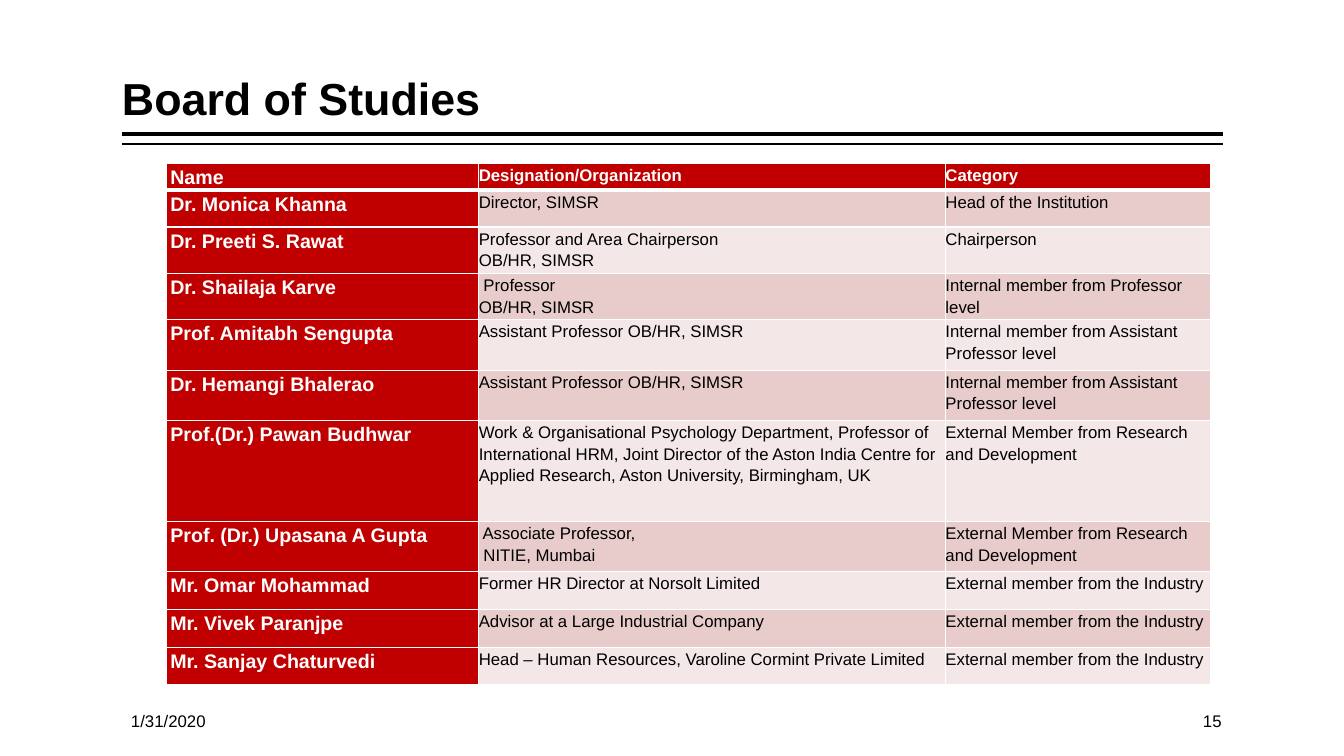
from dataclasses import dataclass

from lxml.etree import SubElement
from pptx import Presentation
from pptx.dml.color import RGBColor
from pptx.enum.shapes import MSO_CONNECTOR
from pptx.enum.text import MSO_ANCHOR, PP_ALIGN
from pptx.oxml import parse_xml
from pptx.oxml.ns import nsdecls, qn
from pptx.slide import Slide
from pptx.table import _Cell
from pptx.text.text import _Paragraph
from pptx.util import Inches, Length, Pt

# Grid of 160 columns by 90 rows, twelve units to the inch
UNITS_PER_INCH = 12
LEFT, CONTENT_WIDTH = 14.52, 131.04
COLUMN_WIDTHS = (37.2, 55.56, 31.56)


@dataclass(frozen=True)
class Theme:
    font: str = "Arial"
    black: str = "000000"
    white: str = "FFFFFF"
    red: str = "C00000"
    bands: tuple[str, str] = ("F4E7E7", "E8CCCC")
    title_size: int = 32
    name_size: int = 14
    text_size: int = 12
    line_spacing: float = 1.15


@dataclass(frozen=True)
class Label:
    text: str
    left: float
    top: float
    width: float
    height: float
    size: int
    bold: bool = False
    anchor: MSO_ANCHOR = MSO_ANCHOR.MIDDLE
    alignment: PP_ALIGN = PP_ALIGN.LEFT


@dataclass(frozen=True)
class Rule:
    top: float
    weight: float


@dataclass(frozen=True)
class Member:
    height: float
    name: str
    designation: str
    category: str


THEME = Theme()
RULES = (Rule(15.96, 3), Rule(17.16, 1))
LABELS = (
    Label("Board of Studies", LEFT, 0.96, CONTENT_WIDTH, 14.4, THEME.title_size,
          bold=True, anchor=MSO_ANCHOR.BOTTOM),
    Label("1/31/2020", 15.6, 83.4, 24, 4.8, THEME.text_size),
    Label("15", 121.44, 83.4, 24, 4.8, THEME.text_size, alignment=PP_ALIGN.RIGHT),
)
ASSISTANT = "Assistant Professor OB/HR, SIMSR"
INTERNAL = "Internal member from Assistant Professor level"
RESEARCH = "External Member from Research and Development"
INDUSTRY = "External member from the Industry"
MEMBERS = (
    Member(2.9, "Name", "Designation/Organization", "Category"),
    Member(4.4, "Dr. Monica Khanna", "Director, SIMSR", "Head of the Institution"),
    Member(5.1, "Dr. Preeti S. Rawat",
           "Professor and Area Chairperson\nOB/HR, SIMSR", "Chairperson"),
    Member(5.1, "Dr. Shailaja Karve", " Professor\nOB/HR, SIMSR",
           "Internal member from Professor level"),
    Member(6, "Prof. Amitabh Sengupta", ASSISTANT, INTERNAL),
    Member(6, "Dr. Hemangi Bhalerao", ASSISTANT, INTERNAL),
    Member(12, "Prof.(Dr.) Pawan Budhwar",
           "Work & Organisational Psychology Department, Professor of International HRM, "
           "Joint Director of the Aston India Centre for Applied Research, "
           "Aston University, Birmingham, UK", RESEARCH),
    Member(6, "Prof. (Dr.) Upasana A Gupta",
           " Associate Professor,\n NITIE, Mumbai", RESEARCH),
    Member(4.5, "Mr. Omar Mohammad", "Former HR Director at Norsolt Limited", INDUSTRY),
    Member(4.5, "Mr. Vivek Paranjpe", "Advisor at a Large Industrial Company", INDUSTRY),
    Member(4.5, "Mr. Sanjay Chaturvedi",
           "Head – Human Resources, Varoline Cormint Private Limited", INDUSTRY),
)


def grid(units: float) -> Length:
    return Inches(units / UNITS_PER_INCH)


def set_format(target: object, values: dict[str, object]) -> None:
    for attribute, value in values.items():
        setattr(target, attribute, value)


def style_paragraph(paragraph: _Paragraph, size: int, color: str, bold: bool) -> None:
    set_format(paragraph.font, {"name": THEME.font, "size": Pt(size), "bold": bold})
    paragraph.font.color.rgb = RGBColor.from_string(color)


def draw_label(slide: Slide, label: Label) -> None:
    shape = slide.shapes.add_textbox(
        *map(grid, (label.left, label.top, label.width, label.height)))
    frame = shape.text_frame
    set_format(frame, {
        "text": label.text, "word_wrap": True, "vertical_anchor": label.anchor,
        "margin_left": 0, "margin_right": 0,
        "margin_top": Inches(0.05), "margin_bottom": Inches(0.05),
    })
    paragraph = frame.paragraphs[0]
    paragraph.alignment = label.alignment
    style_paragraph(paragraph, label.size, THEME.black, label.bold)


def draw_rule(slide: Slide, rule: Rule) -> None:
    connector = slide.shapes.add_connector(
        MSO_CONNECTOR.STRAIGHT, grid(LEFT + CONTENT_WIDTH), grid(rule.top),
        grid(LEFT), grid(rule.top))
    connector.line.width = Pt(rule.weight)
    connector.line.color.rgb = RGBColor.from_string(THEME.black)
    SubElement(connector._element.spPr, qn("a:effectLst"))


def add_borders(cell: _Cell, weights: dict[str, float]) -> None:
    properties = cell._tc.get_or_add_tcPr()
    for position, (side, weight) in enumerate(weights.items()):
        properties.insert(position, parse_xml(
            f'<a:ln{side} {nsdecls("a")} w="{Pt(weight)}"><a:solidFill>'
            f'<a:srgbClr val="{THEME.white}"/></a:solidFill></a:ln{side}>'))


def fill_cell(cell: _Cell, text: str, row: int, column: int) -> None:
    is_name, is_header = column == 0, row == 0
    strong = is_name or is_header
    margin = Inches(0.04) if is_name else 0
    set_format(cell, {"text": text, "margin_left": margin, "margin_right": margin,
                      "margin_top": 0, "margin_bottom": 0})
    cell.fill.solid()
    cell.fill.fore_color.rgb = RGBColor.from_string(
        THEME.red if strong else THEME.bands[row % 2])
    add_borders(cell, {"L": 1, "R": 1, "T": 3 if row == 1 else 1,
                       "B": 3 if is_header else 1})
    for paragraph in cell.text_frame.paragraphs:
        paragraph.line_spacing = THEME.line_spacing
        style_paragraph(paragraph, THEME.name_size if is_name else THEME.text_size,
                        THEME.white if strong else THEME.black, strong)


def draw_members(slide: Slide, members: tuple[Member, ...]) -> None:
    table = slide.shapes.add_table(
        len(members), len(COLUMN_WIDTHS), grid(19.8), grid(19.4),
        grid(sum(COLUMN_WIDTHS)), grid(sum(member.height for member in members))).table
    for column, width in enumerate(COLUMN_WIDTHS):
        table.columns[column].width = grid(width)
    for row, member in enumerate(members):
        table.rows[row].height = grid(member.height)
        for column, text in enumerate((member.name, member.designation, member.category)):
            fill_cell(table.cell(row, column), text, row, column)


def main() -> None:
    presentation = Presentation()
    set_format(presentation, {"slide_width": grid(160), "slide_height": grid(90)})
    slide = presentation.slides.add_slide(presentation.slide_layouts[6])

    # Double rule under the title
    for rule in RULES:
        draw_rule(slide, rule)
    # Title, date and slide number
    for label in LABELS:
        draw_label(slide, label)
    # Table of board members
    draw_members(slide, MEMBERS)

    presentation.save("out.pptx")


if __name__ == "__main__":
    main()
